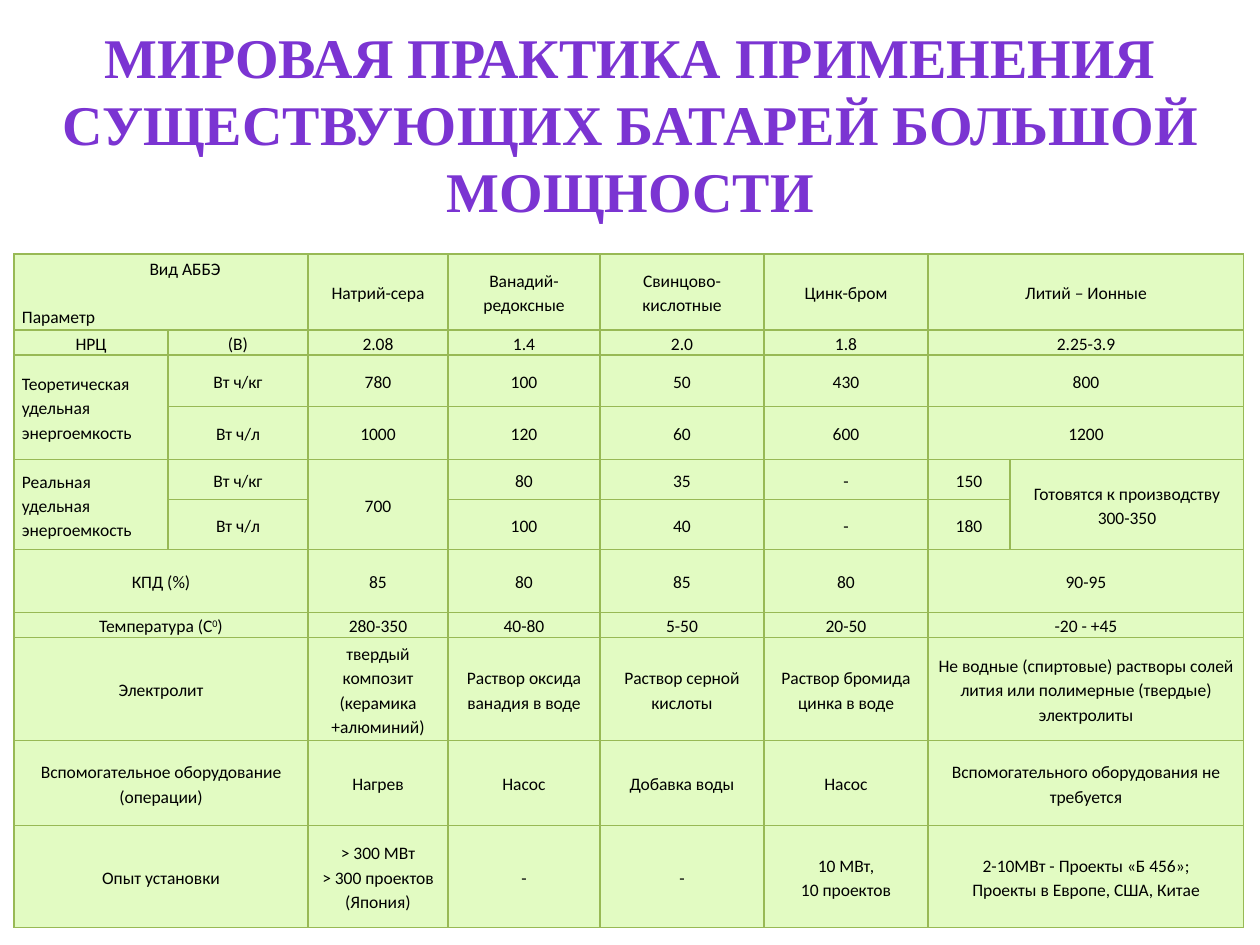
from lxml import etree
from pptx import Presentation
from pptx import util as u
from pptx.dml import color
from pptx.enum import text
from pptx.oxml import ns

PX = 914400 / 126
GREEN, LINE, PURPLE, BLACK = "E2FBC2", "98B955", "7B34D2", "000000"
TITLE = "МИРОВАЯ ПРАКТИКА ПРИМЕНЕНИЯ СУЩЕСТВУЮЩИХ БАТАРЕЙ БОЛЬШОЙ МОЩНОСТИ"
COLUMNS = [154, 140, 140, 152, 164, 164, 82, 234]
HEIGHTS = [76, 25, 52, 53, 40, 50, 63, 25, 103, 85, 102]
LEFT, UP = "<", "^"
ROWS = [
    ["Вид АББЭ\nПараметр", LEFT, "Натрий-сера", "Ванадий-редоксные",
     "Свинцово-кислотные", "Цинк-бром", "Литий – Ионные", LEFT],
    ["НРЦ", "(В)", "2.08", "1.4", "2.0", "1.8", "2.25-3.9", LEFT],
    ["Теоретическая\nудельная энергоемкость", "Вт ч/кг", "780", "100", "50", "430", "800", LEFT],
    [UP, "Вт ч/л", "1000", "120", "60", "600", "1200", LEFT],
    ["Реальная удельная энергоемкость", "Вт ч/кг", "700", "80", "35", "-", "150",
     "Готовятся к производству\n300-350"],
    [UP, "Вт ч/л", UP, "100", "40", "-", "180", UP],
    ["КПД (%)", LEFT, "85", "80", "85", "80", "90-95", LEFT],
    ["Температура (С|0|)", LEFT, "280-350", "40-80", "5-50", "20-50", "-20 - +45", LEFT],
    ["Электролит", LEFT, "твердый композит (керамика +алюминий)",
     "Раствор оксида ванадия в воде", "Раствор серной кислоты",
     "Раствор бромида цинка в воде",
     "Не водные (спиртовые) растворы солей лития или полимерные (твердые) электролиты", LEFT],
    ["Вспомогательное оборудование (операции)", LEFT, "Нагрев", "Насос",
     "Добавка воды", "Насос", "Вспомогательного оборудования не требуется", LEFT],
    ["Опыт установки", LEFT, "> 300 МВт\n> 300 проектов (Япония)", "-", "-",
     "10 МВт,\n10 проектов", "2-10МВт - Проекты «Б 456»;\nПроекты в Европе, США, Китае", LEFT],
]
LEFT_ALIGNED = [(2, 0), (4, 0)]


def px(length):
    """Turn whole pixels into EMU."""
    return u.Emu(round(length * PX))


def rgb(value):
    """Turn a hex string into a colour."""
    return color.RGBColor.from_string(value)


def add_span(para, words, size, face, tint, bold=False):
    """Add one styled run to a paragraph."""
    span = para.add_run()
    span.text = words
    span.font.size = u.Pt(size)
    span.font.name = face
    span.font.bold = bold
    span.font.color.rgb = rgb(tint)
    return span


def add_title(page):
    """Add the slide heading."""
    box = page.shapes.add_textbox(px(35), px(16), px(1191), px(217))
    box.text_frame.word_wrap = True
    para = box.text_frame.paragraphs[0]
    para.alignment = text.PP_ALIGN.CENTER
    add_span(para, TITLE, 32, "Times New Roman", PURPLE, True)


def paint_cell(cell):
    """Give a cell its fill, borders, margins and anchor."""
    properties = cell._tc.get_or_add_tcPr()
    for side in ("lnL", "lnR", "lnT", "lnB"):
        border = etree.SubElement(properties, ns.qn(f"a:{side}"), w=str(u.Pt(0.75)))
        fill = etree.SubElement(border, ns.qn("a:solidFill"))
        etree.SubElement(fill, ns.qn("a:srgbClr"), val=LINE)
    cell.fill.solid()
    cell.fill.fore_color.rgb = rgb(GREEN)
    cell.margin_left = cell.margin_right = px(8)
    cell.margin_top = cell.margin_bottom = 0
    cell.vertical_anchor = text.MSO_ANCHOR.MIDDLE


def write_cell(cell, words, alignment):
    """Write a cell's paragraphs, raising the parts between bars."""
    frame = cell.text_frame
    for index, line in enumerate(words.split("\n")):
        para = frame.add_paragraph() if index else frame.paragraphs[0]
        para.alignment = alignment
        para.line_spacing = 1.15
        for part, piece in enumerate(line.split("|")):
            span = add_span(para, piece, 10, "Calibri", BLACK)
            if part % 2:
                span._r.get_or_add_rPr().set("baseline", "30000")


def style_corner(cell):
    """Set the column heading to the right and the row heading low on the left."""
    kind, parameter = cell.text_frame.paragraphs
    kind._p.get_or_add_pPr().set("marL", str(px(48)))
    parameter.alignment = text.PP_ALIGN.LEFT
    parameter.space_before = u.Pt(14)


def add_batteries(page):
    """Add the battery comparison table."""
    frame = page.shapes.add_table(len(ROWS), len(COLUMNS), px(14), px(254),
                                  px(sum(COLUMNS)), px(sum(HEIGHTS)))
    table = frame.table
    table.first_row = table.horz_banding = False
    for column, width in zip(table.columns, COLUMNS):
        column.width = px(width)
    for row, height in zip(table.rows, HEIGHTS):
        row.height = px(height)
    for r, row in enumerate(ROWS):
        for c, words in enumerate(row):
            cell = table.cell(r, c)
            paint_cell(cell)
            if words == LEFT:
                table.cell(r, c - 1).merge(cell)
            elif words == UP:
                table.cell(r - 1, c).merge(cell)
            else:
                side = text.PP_ALIGN.LEFT if (r, c) in LEFT_ALIGNED else text.PP_ALIGN.CENTER
                write_cell(cell, words, side)
    style_corner(table.cell(0, 0))


def main():
    """Build and save the slide."""
    deck = Presentation()
    deck.slide_width, deck.slide_height = px(1260), px(945)
    page = deck.slides.add_slide(deck.slide_layouts[6])
    add_title(page)
    add_batteries(page)
    deck.save("out.pptx")


if __name__ == "__main__":
    main()
